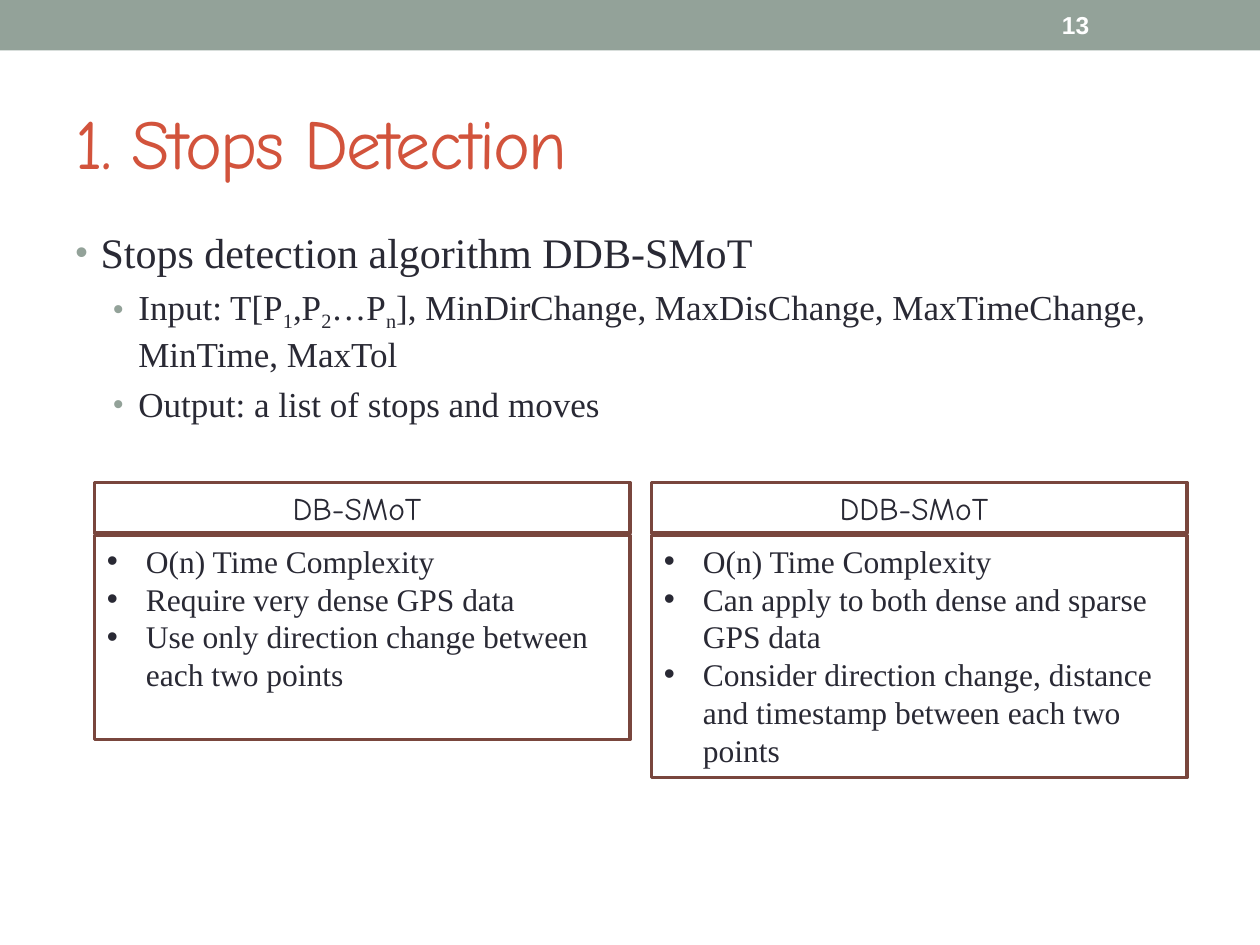
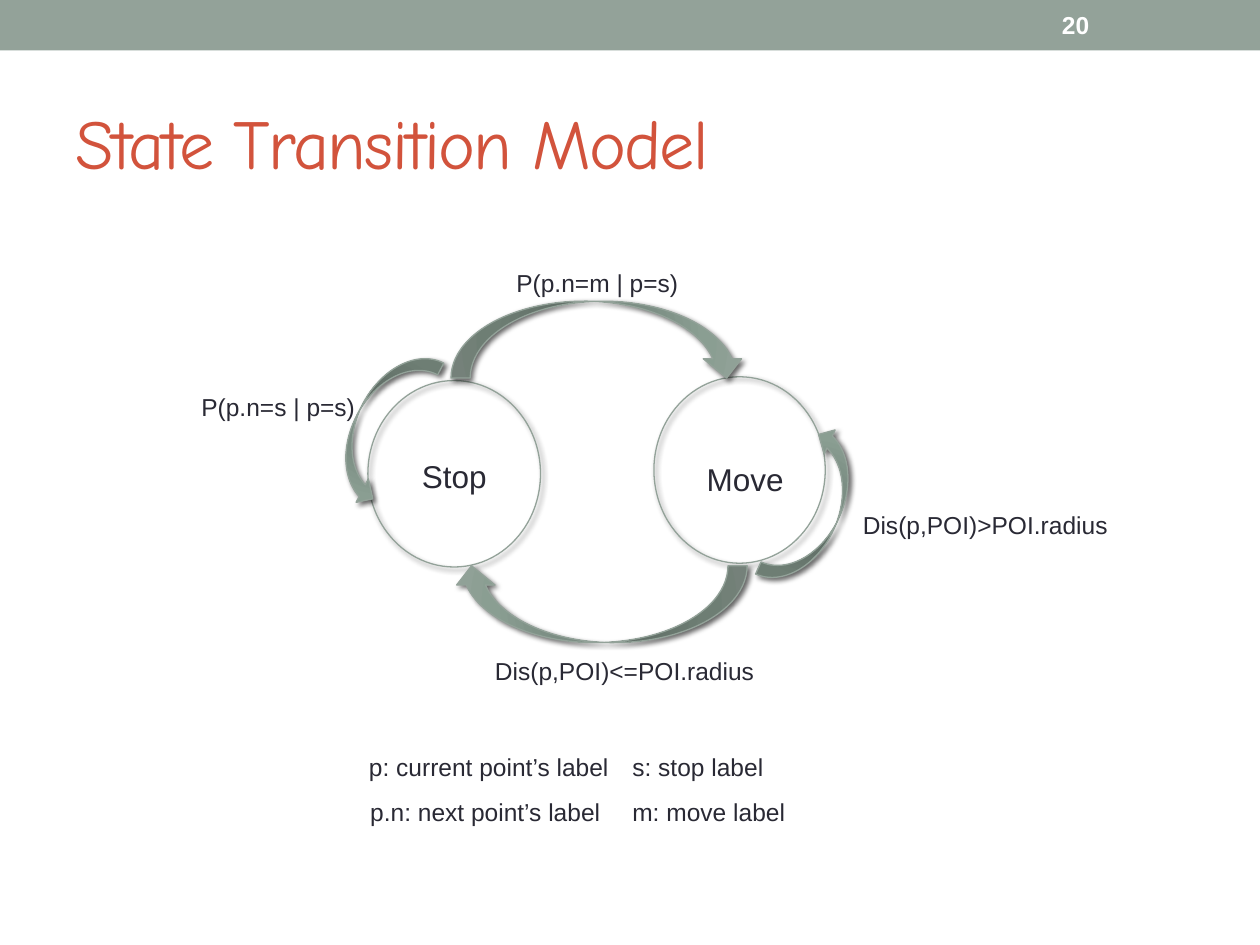
from dataclasses import dataclass
from typing import Any, NamedTuple

from pptx import Presentation
from pptx.dml.color import RGBColor
from pptx.enum import shapes, text
from pptx.oxml import ns, parse_xml
from pptx.util import Inches, Pt

SHAPE = shapes.MSO_SHAPE
ALIGN = text.PP_ALIGN
ANCHOR = text.MSO_ANCHOR


@dataclass(frozen=True)
class Theme:
    sage: str = "93A299"
    red: str = "D2533C"
    brown: str = "79463D"
    ink: str = "292934"
    white: str = "FFFFFF"
    shadow: str = "000000"
    arrow_stops: tuple = ((0, "7B8E82"), (34, "7B8D83"), (70, "8A9E92"), (100, "93A299"))
    hand: str = "Comic Neue"
    serif: str = "Times New Roman"
    sans: str = "Arial"
    title: int = 40
    topic: int = 24
    detail: int = 20
    card: int = 18
    label: int = 14


T = Theme()


class Box(NamedTuple):
    left: float
    top: float
    width: float
    height: float

    def lengths(self) -> list:
        return [Inches(v) for v in self]


class Style(NamedTuple):
    font: str
    size: int
    color: str = T.ink
    bold: bool = False
    spacing: int = 0


class Bullet(NamedTuple):
    left: float
    hang: float
    color: str = ""
    percent: int = 100


class Card(NamedTuple):
    heading: str
    points: tuple
    left: float
    height: float


class Label(NamedTuple):
    text: str
    box: Box
    size: int = T.label


class Arrow(NamedTuple):
    preset: Any
    box: Box
    rotation: float = 0


TITLE = Style(T.hand, T.title, T.red, spacing=-100)
PAGE_NUMBER = Style(T.sans, T.label, T.white, bold=True)
TOPIC = Style(T.serif, T.topic)
DETAIL = Style(T.serif, T.detail)
CARD_HEADING = Style(T.hand, T.card)
CARD_POINT = Style(T.serif, T.card)

TOPIC_BULLET = Bullet(0.2, 0.2, T.sage, 85)
DETAIL_BULLET = Bullet(0.5, 0.2, T.sage, 85)
CARD_BULLET = Bullet(0.31, 0.31)

OUTLINE = (  # text between tildes is subscript
    ("Stops detection algorithm DDB-SMoT", 0, TOPIC, TOPIC_BULLET),
    ("Input: T[P~1~,P~2~…P~n~], MinDirChange, MaxDisChange, MaxTimeChange, "
     "MinTime, MaxTol", 1, DETAIL, DETAIL_BULLET),
    ("Output: a list of stops and moves ", 1, DETAIL, DETAIL_BULLET),
)

CARD_WIDTH = 4.25
CARDS = (
    Card("DB-SMoT ", ("O(n) Time Complexity", "Require very dense GPS data",
                      "Use only direction change between each two points"), 0.75, 1.62),
    Card("DDB-SMoT ", ("O(n) Time Complexity",
                       "Can apply to both dense and sparse GPS data",
                       "Consider direction change, distance and timestamp between "
                       "each two points"), 5.17, 1.92),
)

STATES = (Box(2.92, 3.02, 1.37, 1.48), Box(5.19, 2.99, 1.36, 1.48))
TRANSITIONS = (
    Arrow(SHAPE.CURVED_DOWN_ARROW, Box(3.58, 2.39, 2.34, 0.61)),
    Arrow(SHAPE.CURVED_UP_ARROW, Box(2.37, 3.16, 1.32, 0.42), 117.6),
    Arrow(SHAPE.CURVED_UP_ARROW, Box(5.8, 3.83, 1.32, 0.42), 294.3),
    Arrow(SHAPE.CURVED_DOWN_ARROW, Box(3.59, 4.49, 2.34, 0.61), 180),
)
LABELS = (
    Label("Stop", Box(3.25, 3.58, 0.75, 0.4), T.card),
    Label("Move", Box(5.51, 3.6, 0.9, 0.4), T.card),
    Label("P(p.n=m | p=s)", Box(4, 2.08, 1.5, 0.34)),
    Label("P(p.n=s | p=s)", Box(1.5, 3.06, 1.43, 0.34)),
    Label("Dis(p,POI)>POI.radius", Box(6.75, 4, 2.16, 0.34)),
    Label("Dis(p,POI)<=POI.radius", Box(3.83, 5.16, 2.28, 0.34)),
    Label("p: current point’s label", Box(2.83, 5.92, 2.12, 0.34)),
    Label("p.n: next point’s label", Box(2.84, 6.28, 2.04, 0.34)),
    Label("s: stop label", Box(4.92, 5.92, 1.25, 0.34)),
    Label("m: move label", Box(4.92, 6.28, 1.42, 0.34)),
)


def set_values(obj: Any, values: dict) -> None:
    for name, value in values.items():
        setattr(obj, name, value)


def drawing_xml(tag: str, attributes: str = "", inner: str = "") -> Any:
    return parse_xml(f'<a:{tag} {ns.nsdecls("a")} {attributes}>{inner}</a:{tag}>')


def add_bullet(p: Any, bullet: Bullet) -> None:
    pPr = p._p.get_or_add_pPr()
    pPr.set("marL", str(Inches(bullet.left)))
    pPr.set("indent", str(-Inches(bullet.hang)))
    if bullet.color:
        pPr.append(drawing_xml("buClr", inner=f'<a:srgbClr val="{bullet.color}"/>'))
    pPr.append(drawing_xml("buSzPct", f'val="{bullet.percent * 1000}"'))
    pPr.append(drawing_xml("buFont", f'typeface="{T.sans}"'))
    pPr.append(drawing_xml("buChar", 'char="•"'))


def write(p: Any, content: str, style: Style) -> None:
    """Add runs to p; every second part between tildes is subscript."""
    for i, part in enumerate(content.split("~")):
        r = p.add_run()
        r.text = part
        set_values(r.font, {"name": style.font, "size": Pt(style.size), "bold": style.bold})
        r.font.color.rgb = RGBColor.from_string(style.color)
        rPr = r._r.get_or_add_rPr()
        if style.spacing:
            rPr.set("spc", str(style.spacing))
        if i % 2:
            rPr.set("baseline", "-25000")


def next_paragraph(tf: Any, index: int) -> Any:
    return tf.add_paragraph() if index else tf.paragraphs[0]


def add_text(s: Any, box: Box, content: str, style: Style,
             anchor: Any = ANCHOR.TOP, wrap: bool = True) -> None:
    tf = s.shapes.add_textbox(*box.lengths()).text_frame
    set_values(tf, {"word_wrap": wrap, "vertical_anchor": anchor})
    write(tf.paragraphs[0], content, style)


def add_shape(s: Any, preset: Any, box: Box, fill: str = "",
              line: str = "", line_width: float = 0.75) -> Any:
    sp = s.shapes.add_shape(preset, *box.lengths())
    sp.shadow.inherit = False
    if fill:
        sp.fill.solid()
        sp.fill.fore_color.rgb = RGBColor.from_string(fill)
    else:
        sp.fill.background()
    if line:
        sp.line.color.rgb = RGBColor.from_string(line)
        sp.line.width = Pt(line_width)
    else:
        sp.line.fill.background()
    return sp


def add_shadow(sp: Any) -> None:
    color = f'<a:srgbClr val="{T.shadow}"><a:alpha val="60000"/></a:srgbClr>'
    sp._element.spPr.find(ns.qn("a:effectLst")).append(drawing_xml(
        "outerShdw", f'blurRad="{Pt(3)}" dist="{Pt(2)}" dir="2700000" rotWithShape="0"', color))


def add_radial_fill(sp: Any) -> None:
    sp.fill.gradient()
    stops = "".join(f'<a:gs pos="{pos * 1000}"><a:srgbClr val="{color}"/></a:gs>'
                    for pos, color in T.arrow_stops)
    corner = " ".join(f'{side}="100000"' for side in "ltrb")
    gradient = drawing_xml("gradFill", 'rotWithShape="1"',
                           f'<a:gsLst>{stops}</a:gsLst><a:path path="circle">'
                           f'<a:fillToRect {corner}/></a:path>')
    spPr = sp._element.spPr
    spPr.replace(spPr.find(ns.qn("a:gradFill")), gradient)


def add_slide(prs: Any, title: str, number: int) -> Any:
    s = prs.slides.add_slide(prs.slide_layouts[6])
    add_shape(s, SHAPE.RECTANGLE, Box(0, 0, 10, 0.4), T.sage)
    add_text(s, Box(0.5, 0.58, 9, 1.08), title, TITLE, ANCHOR.MIDDLE)
    add_text(s, Box(8.33, 0.02, 1.17, 0.36), str(number), PAGE_NUMBER, ANCHOR.MIDDLE)
    return s


def add_outline(s: Any) -> None:
    tf = s.shapes.add_textbox(*Box(0.5, 1.75, 9, 5.33).lengths()).text_frame
    tf.word_wrap = True
    for i, (content, level, style, bullet) in enumerate(OUTLINE):
        p = next_paragraph(tf, i)
        p.level = level
        if i:
            p.space_before = Pt(style.size * 0.23)
        add_bullet(p, bullet)
        write(p, content, style)


def add_card(s: Any, card: Card) -> None:
    body = Box(card.left, 4.25, CARD_WIDTH, card.height)
    heading = Box(card.left, 3.83, CARD_WIDTH, 0.4)
    frames = []
    for box in (body, heading):
        tf = add_shape(s, SHAPE.RECTANGLE, box, T.white, T.brown, 2.08).text_frame
        set_values(tf, {"word_wrap": True, "vertical_anchor": ANCHOR.TOP})
        frames.append(tf)
    for i, point in enumerate(card.points):
        p = next_paragraph(frames[0], i)
        p.alignment = ALIGN.LEFT
        add_bullet(p, CARD_BULLET)
        write(p, point, CARD_POINT)
    p = frames[1].paragraphs[0]
    p.alignment = ALIGN.CENTER
    write(p, card.heading, CARD_HEADING)


def build_stops_detection(prs: Any) -> None:
    s = add_slide(prs, "1. Stops Detection", 13)
    add_outline(s)
    for card in CARDS:
        add_card(s, card)


def build_state_model(prs: Any) -> None:
    s = add_slide(prs, "State Transition Model", 20)
    for state in STATES:
        add_shadow(add_shape(s, SHAPE.OVAL, state, line=T.sage))
    for arrow in TRANSITIONS:
        sp = add_shape(s, arrow.preset, arrow.box, line=T.sage)
        sp.rotation = arrow.rotation
        add_radial_fill(sp)
        add_shadow(sp)
    for label in LABELS:
        add_text(s, label.box, label.text, Style(T.sans, label.size), wrap=False)


def main() -> None:
    prs = Presentation()
    set_values(prs, {"slide_width": Inches(10), "slide_height": Inches(7.5)})
    build_stops_detection(prs)
    build_state_model(prs)
    prs.save("out.pptx")


if __name__ == "__main__":
    main()
